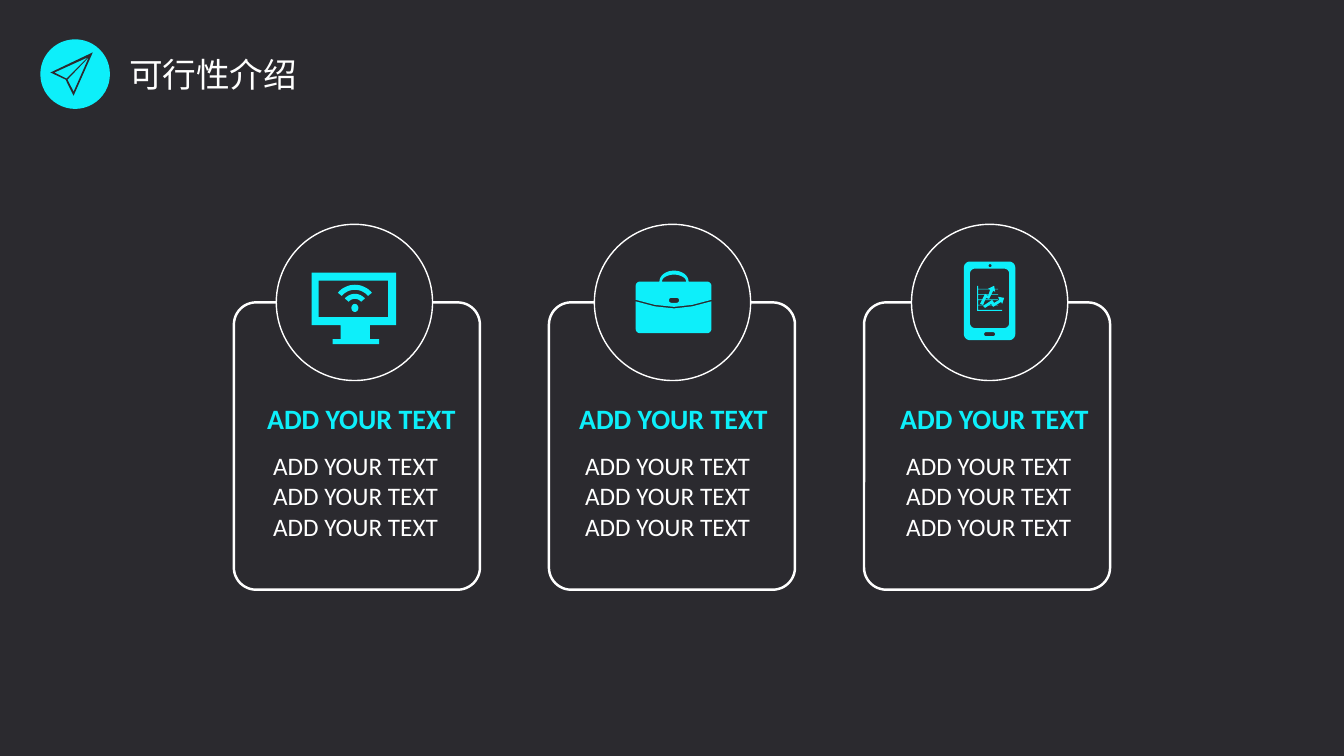
from math import cos, radians, sin

from lxml import etree
from pptx import Presentation
from pptx import util as u
from pptx.dml.color import RGBColor
from pptx.enum import shapes, text
from pptx.oxml import ns

DARK = RGBColor(0x2B, 0x2A, 0x2F)
CYAN = RGBColor(0x0D, 0xEF, 0xFA)
WHITE = RGBColor(0xFF, 0xFF, 0xFF)
UNITS = 1000
CARD_LEFT, CARD_TOP, CARD_PITCH = 2.32, 3, 3.125
CARD_WIDTH, CARD_HEIGHT = 2.44, 2.85
CIRCLE = 1.55
PHRASE = "ADD YOUR TEXT"


def arc(x, y, rx, ry, start, end, steps=16):
    """Return points along an elliptical arc, in degrees clockwise from the right."""
    angles = [radians(start + (end - start) * i / steps) for i in range(steps + 1)]
    return [(x + rx * cos(a), y + ry * sin(a)) for a in angles]


def rounded(x, y, width, height, radius=0):
    """Return the outline of a rectangle with optional round corners."""
    right, bottom = x + width - radius, y + height - radius
    corners = [(right, bottom), (x + radius, bottom), (x + radius, y + radius), (right, y + radius)]
    return [point for i, (cx, cy) in enumerate(corners)
            for point in arc(cx, cy, radius, radius, 90 * i, 90 * i + 90, 6 if radius else 1)]


def band(x, y, outer, inner, spread):
    """Return an upward curved band between two radii."""
    return (arc(x, y, outer, outer, 270 - spread, 270 + spread)
            + arc(x, y, inner, inner, 270 + spread, 270 - spread))


def monitor():
    """Return the outlines of a wireless desktop screen."""
    frame = [(.35, .48), (1.19, .48), (1.19, 1), (.93, 1), (.93, 1.14), (1.02, 1.14),
             (1.02, 1.19), (.56, 1.19), (.56, 1.14), (.64, 1.14), (.64, 1), (.35, 1)]
    return [[frame, rounded(.42, .56, .69, .36), band(.78, .82, .22, .17, 50),
             band(.78, .82, .13, .08, 50), arc(.78, .83, .035, .04, 0, 360)]]


def briefcase():
    """Return the outlines of a briefcase in two halves."""
    flap = [(.41, .75), (.6, .8), (.79, .82), (.97, .8), (1.16, .75)]
    top = flap + arc(1.12, .61, .04, .04, 0, -90, 6) + arc(.79, .57, .145, .11, 360, 180)
    top += arc(.45, .61, .04, .04, 270, 180, 6)
    low = [(x, y + .015) for x, y in flap]
    low += arc(1.12, 1.04, .04, .04, 0, 90, 6) + arc(.45, 1.04, .04, .04, 90, 180, 6)
    return [[top, arc(.79, .57, .12, .07, 180, 360), rounded(.74, .73, .1, .05, .025)], [low]]


def phone():
    """Return the outlines of a phone that shows a chart."""
    body = [rounded(.52, .37, .51, .78, .06), arc(.78, .41, .015, .015, 0, 360),
            rounded(.72, 1.07, .11, .04, .02), rounded(.58, .44, .39, .59, .05)]
    grid = [rounded(.65, .61, .01, .25), rounded(.66, .85, .24, .01)]
    grid += [rounded(.66, .64 + .053 * i, .2, .006) for i in range(4)]
    flat_arrow = [(.86, .72), (.92, .73), (.9, .79), (.89, .77), (.81, .82), (.79, .79),
                  (.73, .83), (.71, .81), (.8, .75), (.82, .78), (.87, .75)]
    steep_arrow = [(.76, .64), (.82, .61), (.83, .67), (.81, .66), (.77, .74), (.74, .73),
                   (.71, .8), (.68, .79), (.73, .69), (.76, .71), (.78, .65)]
    return [body, grid, [flat_arrow], [steep_arrow]]


def paper_plane():
    """Return the outline of a folded paper plane."""
    return [[[(.25, .4), (.33, .56), (.52, .13), (.1, .33)],
             [(.26, .39), (.14, .33), (.47, .18)],
             [(.33, .52), (.27, .4), (.48, .18)]]]


def draw_icon(page, left, top, icon, color):
    """Draw every part of an icon from the given corner."""
    for contours in icon:
        scaled = [[(x * UNITS, y * UNITS) for x, y in contour] for contour in contours]
        builder = page.shapes.build_freeform(*scaled[0][0], scale=u.Inches(1) / UNITS)
        builder.add_line_segments(scaled[0][1:])
        for contour in scaled[1:]:
            builder.move_to(*contour[0])
            builder.add_line_segments(contour[1:])
        part = builder.convert_to_shape(u.Inches(left), u.Inches(top))
        part.shadow.inherit = False
        part.fill.solid()
        part.fill.fore_color.rgb = color
        part.line.fill.background()


def add_outline(page, kind, box, fill=None, weight=None):
    """Place a preset shape with an optional fill and white line."""
    shape = page.shapes.add_shape(kind, *map(u.Inches, box))
    shape.shadow.inherit = False
    if fill is None:
        shape.fill.background()
    else:
        shape.fill.solid()
        shape.fill.fore_color.rgb = fill
    if weight is None:
        shape.line.fill.background()
    else:
        shape.line.color.rgb = WHITE
        shape.line.width = u.Pt(weight)
    return shape


def write(shape, words, size, color, bold=False, font="Calibri"):
    """Fill a shape with one left-aligned paragraph."""
    frame = shape.text_frame
    frame.word_wrap = True
    frame.vertical_anchor = text.MSO_ANCHOR.TOP
    para = frame.paragraphs[0]
    para.text = words
    para.alignment = text.PP_ALIGN.LEFT
    para.font.size = u.Pt(size)
    para.font.bold = bold
    para.font.name = font
    para.font.color.rgb = color
    return para


def add_header(page, left, top):
    """Place the round badge and the slide title."""
    add_outline(page, shapes.MSO_SHAPE.OVAL, (left, top, .69, .69), CYAN)
    draw_icon(page, left, top, paper_plane(), DARK)
    title = page.shapes.title
    title.left, title.top, title.width, title.height = map(
        u.Inches, (left + .78, top + .09, 1.94, .5))
    font = "Noto Sans CJK SC"
    para = write(title, "可行性介绍", 24, WHITE, font=font)
    title.text_frame.auto_size = text.MSO_AUTO_SIZE.NONE
    for properties in para._p.iter(ns.qn("a:defRPr")):
        etree.SubElement(properties, ns.qn("a:ea"), typeface=font)
    span = para.runs[0]
    span.font.name = font
    etree.SubElement(span.font._element, ns.qn("a:ea"), typeface=font)


def add_card(page, left, top, icon, circle_shift, text_shift):
    """Place a framed card with its round icon, heading and body."""
    frame = add_outline(page, shapes.MSO_SHAPE.ROUNDED_RECTANGLE,
                        (left, top, CARD_WIDTH, CARD_HEIGHT), weight=1.75)
    frame.adjustments[0] = .09
    circle_left, circle_top = left + circle_shift, top - CIRCLE / 2
    add_outline(page, shapes.MSO_SHAPE.OVAL,
                (circle_left, circle_top, CIRCLE, CIRCLE), DARK, 1)
    draw_icon(page, circle_left, circle_top, icon, CYAN)
    text_left = left + text_shift
    heading = page.shapes.add_textbox(*map(u.Inches, (text_left, top + .93, 2.09, .44)))
    write(heading, PHRASE, 20, CYAN, bold=True)
    body = page.shapes.add_textbox(*map(u.Inches, (text_left + .06, top + 1.42, 1.97, 1.01)))
    write(body, " ".join([PHRASE] * 3), 18, WHITE)


def main():
    """Build the slide and save it."""
    deck = Presentation()
    deck.slide_width, deck.slide_height = u.Inches(13.33), u.Inches(7.5)
    page = deck.slides.add_slide(deck.slide_layouts[5])
    page.background.fill.solid()
    page.background.fill.fore_color.rgb = DARK
    add_header(page, .4, .39)
    cards = [(monitor(), .42, .23), (briefcase(), .45, .2), (phone(), .47, .26)]
    for column, card in enumerate(cards):
        add_card(page, CARD_LEFT + CARD_PITCH * column, CARD_TOP, *card)
    deck.save("out.pptx")


if __name__ == "__main__":
    main()
